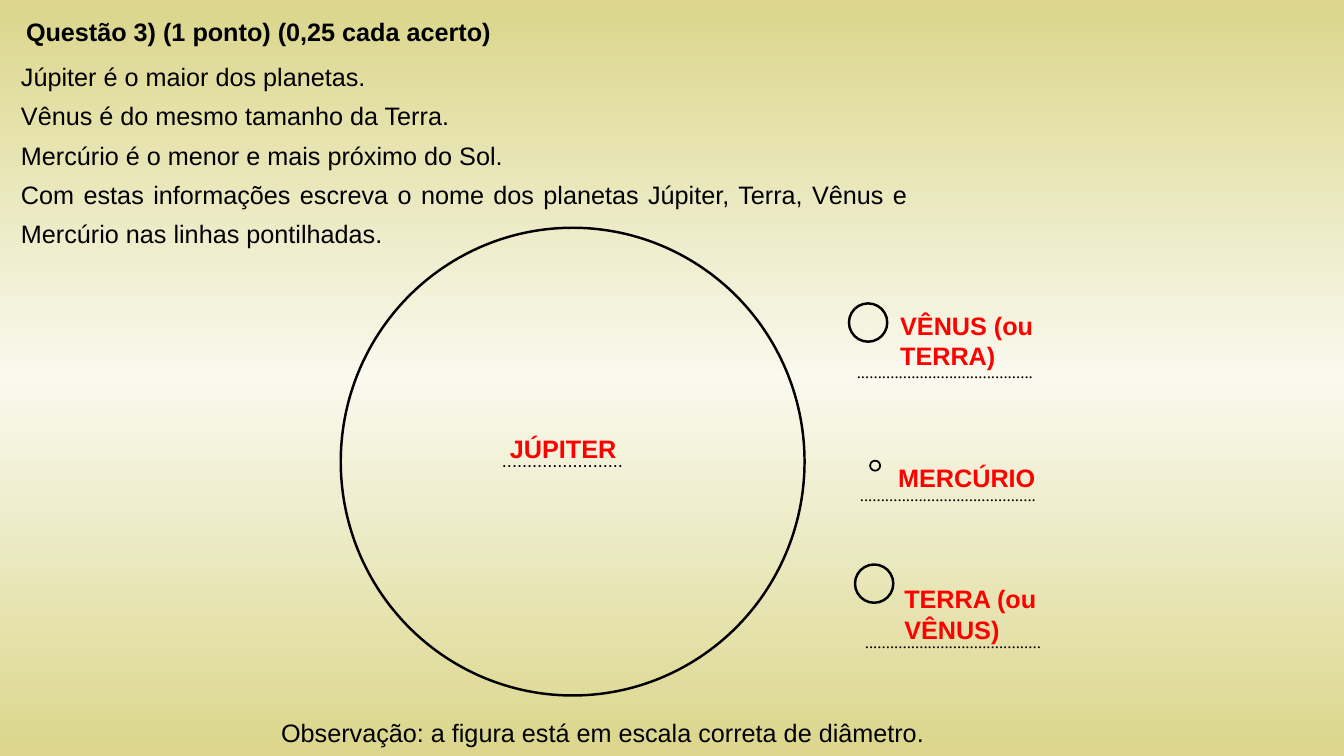
from copy import deepcopy

from pptx import Presentation
from pptx.dml.color import RGBColor
from pptx.enum.shapes import MSO_SHAPE
from pptx.enum.text import MSO_AUTO_SIZE, PP_ALIGN
from pptx.util import Inches, Pt

OVAL = MSO_SHAPE.OVAL
LEFT, JUSTIFY = PP_ALIGN.LEFT, PP_ALIGN.JUSTIFY
GROW = MSO_AUTO_SIZE.SHAPE_TO_FIT_TEXT

THEME = {
    "ink": RGBColor.from_string("000000"),
    "answer": RGBColor.from_string("FF0000"),
    "gradient": [(0, "DBD68B"), (0.5, "F9F9EE"), (1, "DBD68B")],
    "sans": "Arial",
    "serif": "Times New Roman",
    "body": 18,
    "wide_dots": 13,
    "dots": 12,
}

TITLE = "Questão 3) (1 ponto) (0,25 cada acerto)"
STATEMENT = [
    "Júpiter é o maior dos planetas.",
    "Vênus é do mesmo tamanho da Terra.",
    "Mercúrio é o menor e mais próximo do Sol.",
    "Com estas informações escreva o nome dos planetas Júpiter, Terra, "
    "Vênus e Mercúrio nas linhas pontilhadas.",
]
NOTE = "Observação: a figura está em escala correta de diâmetro."

PLANETS = [
    (3.38, 2.26, 4.6, 4.64, 1.75),
    (8.42, 3.01, 0.38, 0.38, 1.75),
    (8.48, 5.6, 0.38, 0.38, 1.75),
    (8.63, 4.57, 0.1, 0.1, 1.25),
]
JUPITER_DOTS = (4.88, 4.41, 1.77, 0.32)
SMALL_DOTS = [(8.4, 3.54), (8.43, 4.76), (8.48, 6.22)]
ANSWERS = [
    ("JÚPITER", (4.96, 4.25, 1.34, 0.4)),
    ("VÊNUS (ou TERRA)", (8.83, 3.03, 1.72, 0.71)),
    ("MERCÚRIO", (8.81, 4.54, 1.58, 0.4)),
    ("TERRA (ou VÊNUS)", (8.87, 5.74, 1.65, 0.71)),
]


def paint_background(s):
    fill = s.background.fill
    fill.gradient()
    fill.gradient_angle = 90
    stop_list = s.element.find(".//{*}gsLst")
    stop_list.append(deepcopy(stop_list[0]))
    for stop, (position, color) in zip(fill.gradient_stops, THEME["gradient"]):
        stop.position = position
        stop.color.rgb = RGBColor.from_string(color)


def add_planet(s, left, top, width, height, weight):
    sp = s.shapes.add_shape(OVAL, *map(Inches, (left, top, width, height)))
    sp.shadow.inherit = False
    sp.fill.background()
    sp.line.color.rgb = THEME["ink"]
    sp.line.width = Pt(weight)


def add_text(s, lines, box, size="body", font="sans", color="ink",
             bold=False, align=LEFT, spacing=1.0, wrap=True):
    tf = s.shapes.add_textbox(*map(Inches, box)).text_frame
    tf.word_wrap = wrap
    tf.auto_size = GROW
    tf.text = "\n".join(lines)
    for p in tf.paragraphs:
        p.alignment = align
        p.line_spacing = spacing
        for r in p.runs:
            r.font.name = THEME[font]
            r.font.size = Pt(THEME[size])
            r.font.bold = bold
            r.font.color.rgb = THEME[color]


def main():
    prs = Presentation()
    prs.slide_width, prs.slide_height = Inches(13.33), Inches(7.5)
    s = prs.slides.add_slide(prs.slide_layouts[6])
    paint_background(s)

    for planet in PLANETS:
        add_planet(s, *planet)

    add_text(s, ["." * 24], JUPITER_DOTS, size="wide_dots")
    for left, top in SMALL_DOTS:
        add_text(s, ["." * 42], (left, top, 2.34, 0.3), size="dots", font="serif")

    add_text(s, STATEMENT, (0.11, 0.47, 8.99, 2.07), align=JUSTIFY, spacing=1.3)
    add_text(s, [TITLE], (0.16, 0.11, 6.77, 0.4), bold=True, align=JUSTIFY)
    for answer, box in ANSWERS:
        add_text(s, [answer], box, color="answer", bold=True)
    add_text(s, [NOTE], (2.69, 6.98, 6.64, 0.49), spacing=1.3, wrap=False)

    prs.save("out.pptx")


if __name__ == "__main__":
    main()
